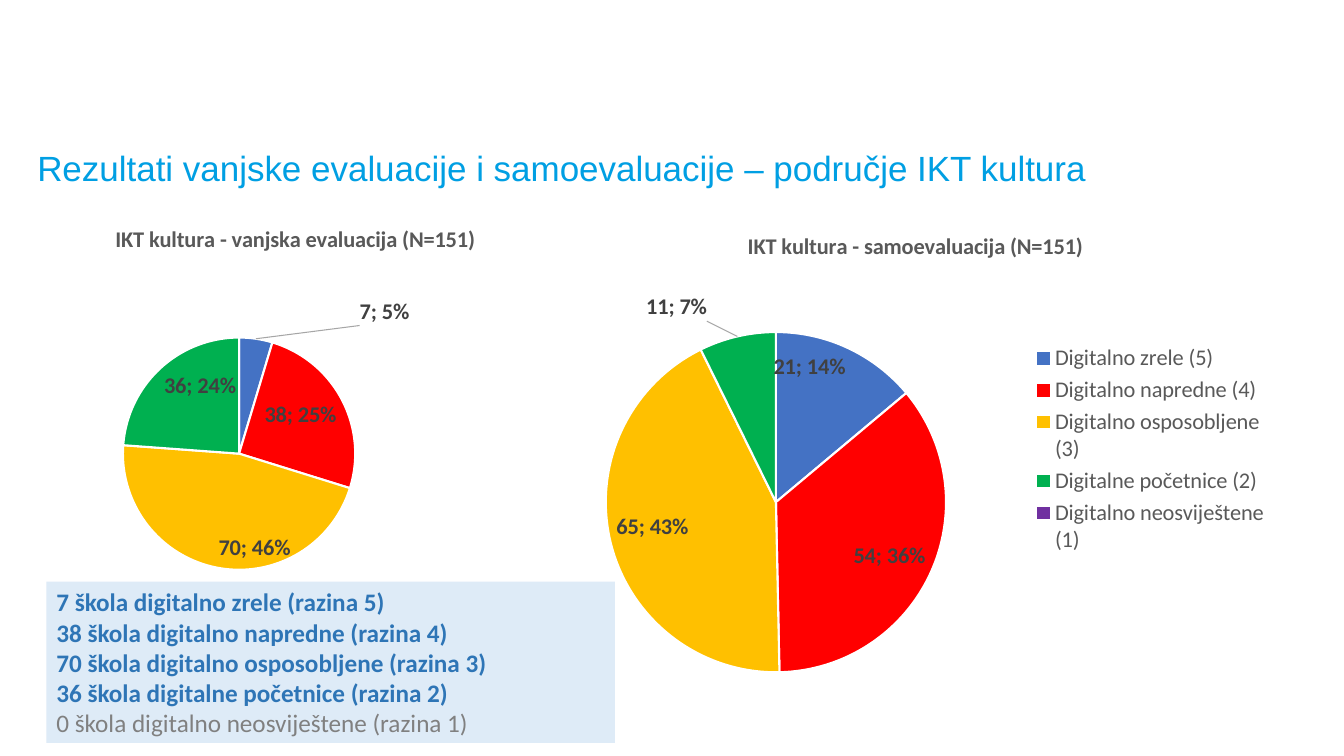
"""Build the slide comparing external evaluation and self-evaluation of ICT culture."""
import copy

import pptx
import pptx.chart.data
import pptx.dml.color
import pptx.enum.chart
import pptx.enum.shapes
import pptx.enum.text
import pptx.oxml
import pptx.oxml.ns
import pptx.util

Cm, Pt = pptx.util.Cm, pptx.util.Pt
qn = pptx.oxml.ns.qn
COLORS = {"title": "009FE3", "gray": "595959", "label": "404040", "white": "FFFFFF",
          "box": "DEEBF7", "strong": "2E75B6", "muted": "808080"}
LEVELS = {"Digitalno zrele (5)": "4472C4", "Digitalno napredne (4)": "FF0000",
          "Digitalno osposobljene (3)": "FFC000", "Digitalne početnice (2)": "00B050",
          "Digitalno neosviještene (1)": "7030A0"}
NS = pptx.oxml.ns.nsdecls("c", "a")


def set_font(font, color, **values):
    for name, value in values.items():
        setattr(font, name, value)
    font.color.rgb = pptx.dml.color.RGBColor.from_string(COLORS[color])


def layout_xml(target="", **values):
    head = f'<c:layoutTarget val="{target}"/>' if target else ""
    modes = "".join(f'<c:{k}Mode val="edge"/>' for k in "xy") if target or "edge" in values else ""
    sizes = "".join(f'<c:{k} val="{values[k]}"/>' for k in "xywh" if k in values)
    return f"<c:layout {NS}><c:manualLayout>{head}{modes}{sizes}</c:manualLayout></c:layout>"


prs = pptx.Presentation()
prs.slide_width, prs.slide_height = Cm(33.87), Cm(19.05)
s = prs.slides.add_slide(prs.slide_layouts[6])

charts = [
    {"title": "IKT kultura - vanjska evaluacija (N=151)", "at": (0.58, 5.16, 18.52, 9.35),
     "cats": ["1", "2", "3", "4", "5"], "values": (7, 38, 70, 36, 0), "legend": False,
     "plot": {"x": 0.034, "y": 0.358, "w": 0.52, "h": 0.626},
     "title_at": {"x": 0.12, "y": 0.04}, "outside": 0, "shift": {"x": 0.14, "y": -0.02}},
    {"title": "IKT kultura - samoevaluacija (N=151)", "at": (13.89, 5.33, 18.36, 11.99),
     "cats": list(LEVELS), "values": (21, 54, 65, 11, 0), "legend": True,
     "plot": {"x": 0.075, "y": 0.253, "w": 0.467, "h": 0.716},
     "title_at": None, "outside": 3, "shift": {"x": -0.04, "y": -0.02}},
]
for spec_values in charts:
    data = pptx.chart.data.CategoryChartData()
    data.categories = spec_values["cats"]
    data.add_series("Series 1", spec_values["values"])
    chart = s.shapes.add_chart(pptx.enum.chart.XL_CHART_TYPE.PIE,
                               *map(Cm, spec_values["at"]), data).chart
    chart.font.name, chart.font.size = "Calibri", Pt(10)

    p = chart.chart_title.text_frame.paragraphs[0]
    r = p.add_run()
    r.text = spec_values["title"]
    set_font(r.font, "gray", name="Calibri", size=Pt(16), bold=True)
    if spec_values["title_at"]:
        title = chart.chart_title._element
        for old in title.findall(qn("c:layout")):
            title.remove(old)
        xml = layout_xml(edge=True, **spec_values["title_at"])
        title.find(qn("c:tx")).addnext(pptx.oxml.parse_xml(xml))

    chart.has_legend = spec_values["legend"]
    if chart.has_legend:
        chart.legend.position = pptx.enum.chart.XL_LEGEND_POSITION.RIGHT
        chart.legend.include_in_layout = False
        set_font(chart.legend.font, "gray", name="Calibri", size=Pt(16))

    plot = chart.plots[0]
    plot.vary_by_categories = True
    area = plot._element.getparent()
    for old in area.findall(qn("c:layout")):
        area.remove(old)
    area.insert(0, pptx.oxml.parse_xml(layout_xml("inner", **spec_values["plot"])))

    series = plot.series[0]
    for i, color in enumerate(LEVELS.values()):
        fmt = series.points[i].format
        fmt.fill.solid()
        fmt.fill.fore_color.rgb = pptx.dml.color.RGBColor.from_string(color)
        fmt.line.color.rgb = pptx.dml.color.RGBColor.from_string(COLORS["white"])
        fmt.line.width = Pt(1.5)

    labels = series.data_labels
    labels.show_value = labels.show_percentage = True
    labels.position = pptx.enum.chart.XL_LABEL_POSITION.INSIDE_END
    set_font(labels.font, "label", name="Calibri", size=Pt(16), bold=True)
    root = labels._element
    root.find(qn("c:showLeaderLines")).addprevious(
        pptx.oxml.parse_xml(f"<c:separator {NS}>; </c:separator>"))
    flags = "".join(f'<c:show{name} val="{int(name in ("Val", "Percent"))}"/>' for name in
                    ("LegendKey", "Val", "CatName", "SerName", "Percent", "BubbleSize"))
    moved = pptx.oxml.parse_xml(
        f'<c:dLbl {NS}><c:idx val="{spec_values["outside"]}"/>'
        f'{layout_xml(**spec_values["shift"])}<c:dLblPos val="outEnd"/>{flags}'
        '<c:separator>; </c:separator></c:dLbl>')
    moved.find(qn("c:dLblPos")).addprevious(copy.deepcopy(root.find(qn("c:txPr"))))
    root.insert(0, moved)
    root.insert(1, pptx.oxml.parse_xml(
        f'<c:dLbl {NS}><c:idx val="4"/><c:delete val="1"/></c:dLbl>'))
    root.append(pptx.oxml.parse_xml(
        f'<c:leaderLines {NS}><c:spPr><a:ln w="9525"><a:solidFill><a:srgbClr val="A6A6A6"/>'
        '</a:solidFill></a:ln></c:spPr></c:leaderLines>'))

sp = s.shapes.add_textbox(Cm(0.69), Cm(3.12), Cm(32.41), Cm(1.78))
tf = sp.text_frame
tf.word_wrap = True
tf.vertical_anchor = pptx.enum.text.MSO_ANCHOR.BOTTOM
p = tf.paragraphs[0]
p.line_spacing = 0.9
r = p.add_run()
r.text = "Rezultati vanjske evaluacije i samoevaluacije – područje IKT kultura"
set_font(r.font, "title", name="Arial", size=Pt(25))

sp = s.shapes.add_shape(pptx.enum.shapes.MSO_SHAPE.RECTANGLE,
                        Cm(1.17), Cm(14.66), Cm(14.33), Cm(4.06))
sp.shadow.inherit = False
sp.fill.solid()
sp.fill.fore_color.rgb = pptx.dml.color.RGBColor.from_string(COLORS["box"])
sp.line.fill.background()
tf = sp.text_frame
tf.word_wrap = True
tf.vertical_anchor = pptx.enum.text.MSO_ANCHOR.TOP
groups = ["digitalno zrele", "digitalno napredne", "digitalno osposobljene",
          "digitalne početnice", "digitalno neosviještene"]
for i, (count, group) in enumerate(zip(charts[0]["values"], groups)):
    p = tf.add_paragraph() if i else tf.paragraphs[0]
    p.alignment = pptx.enum.text.PP_ALIGN.LEFT
    r = p.add_run()
    r.text = f"{count} škola {group} (razina {5 - i})"
    set_font(r.font, "strong" if count else "muted", name="Calibri", size=Pt(18), bold=count > 0)

prs.save("out.pptx")
